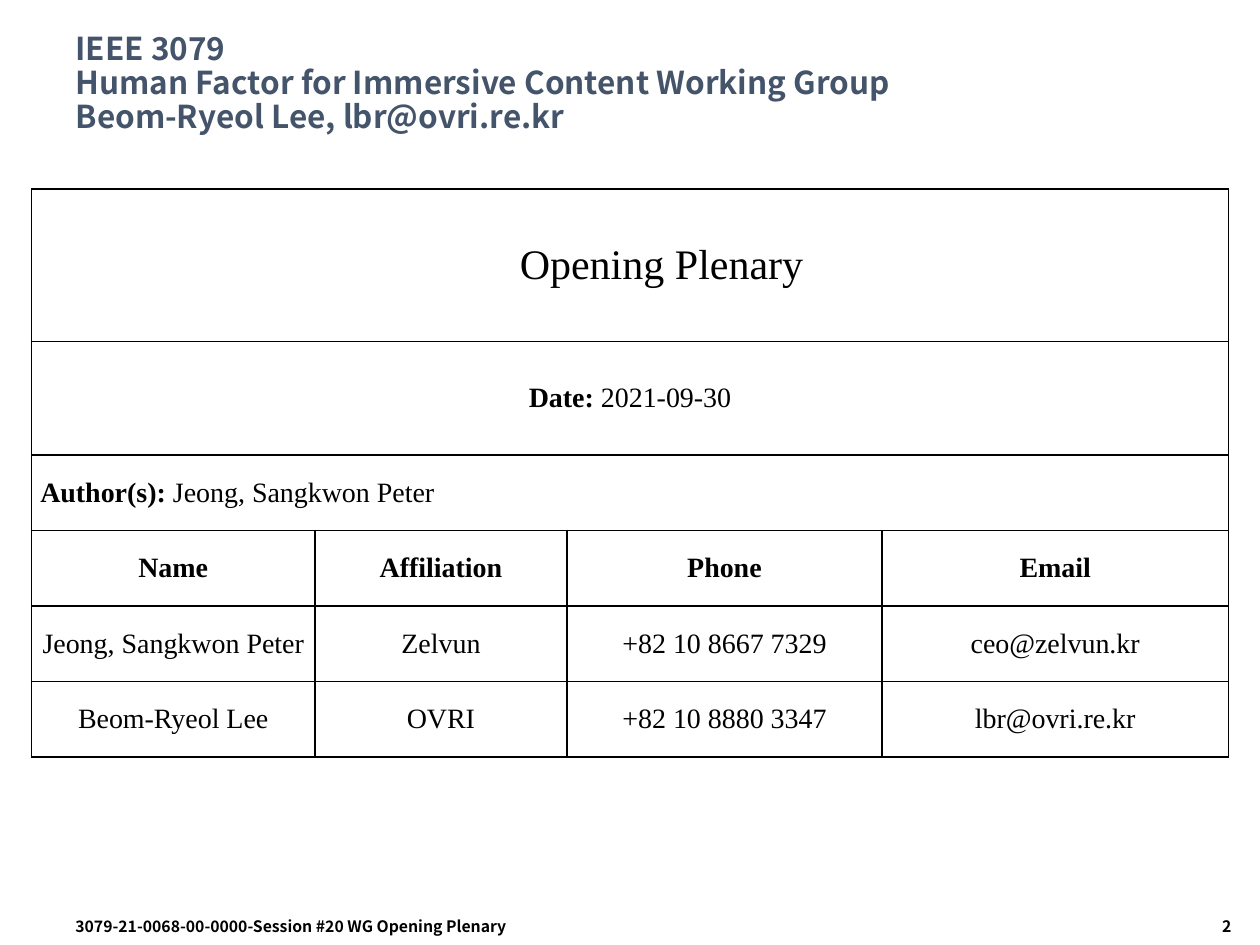
from dataclasses import dataclass

from lxml import etree
from pptx import Presentation
from pptx.dml.color import RGBColor
from pptx.enum.text import MSO_ANCHOR, MSO_AUTO_SIZE, PP_ALIGN
from pptx.oxml.ns import qn
from pptx.util import Pt

PX = 9144  # EMU in one px, at 100 px to the inch
LEFT, CENTER, RIGHT = PP_ALIGN.LEFT, PP_ALIGN.CENTER, PP_ALIGN.RIGHT
MIDDLE = MSO_ANCHOR.MIDDLE
NO_AUTOFIT = MSO_AUTO_SIZE.NONE
SANS, SERIF = "Noto Sans CJK KR", "Times New Roman"
BLACK, SLATE = "000000", "44546A"

COLUMNS = [225, 200, 250, 275]
ROWS = [121, 90, 60, 60, 60, 60]


@dataclass
class Banner:
    """A table row merged across all columns: a bold label, then plain text."""
    label: str
    text: str
    align: PP_ALIGN = CENTER
    size: int = 16
    space_after: int = 0
    indent: int = 0


@dataclass
class Footer:
    text: str
    left: int
    width: int
    align: PP_ALIGN


BANNERS = [
    Banner("", "Opening Plenary", size=24, space_after=12, indent=50),
    Banner("Date:", " 2021-09-30", space_after=12),
    Banner("Author(s): ", "Jeong, Sangkwon Peter", align=LEFT),
]
PEOPLE = [
    ["Name", "Affiliation", "Phone", "Email"],
    ["Jeong, Sangkwon Peter", "Zelvun", "+82 10 8667 7329", "ceo@zelvun.kr"],
    ["Beom-Ryeol Lee", "OVRI", "+82 10 8880 3347", "lbr@ovri.re.kr"],
]
FOOTERS = [
    Footer("2", 825, 162, RIGHT),
    Footer("3079-21-0068-00-0000-Session #20 WG Opening Plenary", 50, 442, LEFT),
]
TITLE = "\v".join([
    "IEEE 3079",
    "Human Factor for Immersive Content Working Group",
    "Beom-Ryeol Lee, lbr@ovri.re.kr",
])


def px(n: int) -> int:
    return n * PX


def rgb(color: str) -> RGBColor:
    return RGBColor.from_string(color)


def style(p, font: str, size: int, color: str, align: PP_ALIGN, bold=None) -> None:
    p.alignment = align
    p.font.name = font
    p.font.size = Pt(size)
    p.font.color.rgb = rgb(color)
    p.font.bold = bold


def format_cell(cell) -> None:
    """Give a cell thin black borders, no fill, and tight margins."""
    tc_pr = cell._tc.get_or_add_tcPr()
    for side in ("lnL", "lnR", "lnT", "lnB"):
        ln = etree.SubElement(tc_pr, qn(f"a:{side}"), w=str(Pt(1)))
        fill = etree.SubElement(ln, qn("a:solidFill"))
        etree.SubElement(fill, qn("a:srgbClr"), val=BLACK)
    cell.fill.background()
    cell.margin_left = cell.margin_right = px(7)
    cell.margin_top = cell.margin_bottom = 0
    cell.vertical_anchor = MIDDLE


def fill_banner(cell, banner: Banner) -> None:
    p = cell.text_frame.paragraphs[0]
    style(p, SERIF, banner.size, BLACK, banner.align)
    p.space_after = Pt(banner.space_after)
    if banner.indent:
        p_pr = p._p.get_or_add_pPr()
        p_pr.set("marL", str(px(banner.indent)))
        p_pr.set("indent", "0")
    for text, bold in ((banner.label, True), (banner.text, False)):
        if text:
            r = p.add_run()
            r.text = text
            r.font.bold = bold


def add_title(s) -> None:
    title = s.shapes.title
    title.left, title.top, title.width, title.height = map(px, (50, 17, 900, 100))
    tf = title.text_frame
    tf.text = TITLE
    tf.auto_size = NO_AUTOFIT
    tf.vertical_anchor = MIDDLE
    p = tf.paragraphs[0]
    style(p, SANS, 18, SLATE, LEFT, bold=True)
    p.line_spacing = 0.9


def add_plenary_table(s) -> None:
    table = s.shapes.add_table(len(ROWS), len(COLUMNS), px(25), px(150),
                               px(sum(COLUMNS)), px(sum(ROWS))).table
    table.first_row = table.horz_banding = False
    for column, width in zip(table.columns, COLUMNS):
        column.width = px(width)
    for row, height in zip(table.rows, ROWS):
        row.height = px(height)
    for cell in table.iter_cells():
        format_cell(cell)
    for i, banner in enumerate(BANNERS):
        cell = table.cell(i, 0)
        cell.merge(table.cell(i, len(COLUMNS) - 1))
        fill_banner(cell, banner)
    for i, person in enumerate(PEOPLE):
        for j, text in enumerate(person):
            cell = table.cell(len(BANNERS) + i, j)
            cell.text = text
            style(cell.text_frame.paragraphs[0], SERIF, 16, BLACK, CENTER, bold=i == 0)


def add_footer(s, footer: Footer) -> None:
    tf = s.shapes.add_textbox(px(footer.left), px(723), px(footer.width), px(27)).text_frame
    tf.word_wrap = True
    tf.text = footer.text
    style(tf.paragraphs[0], SANS, 9, BLACK, footer.align, bold=True)


def main() -> None:
    prs = Presentation()
    prs.slide_width, prs.slide_height = px(1000), px(750)
    s = prs.slides.add_slide(prs.slide_layouts[5])
    add_title(s)
    add_plenary_table(s)
    for footer in FOOTERS:
        add_footer(s, footer)
    prs.save("out.pptx")


if __name__ == "__main__":
    main()
